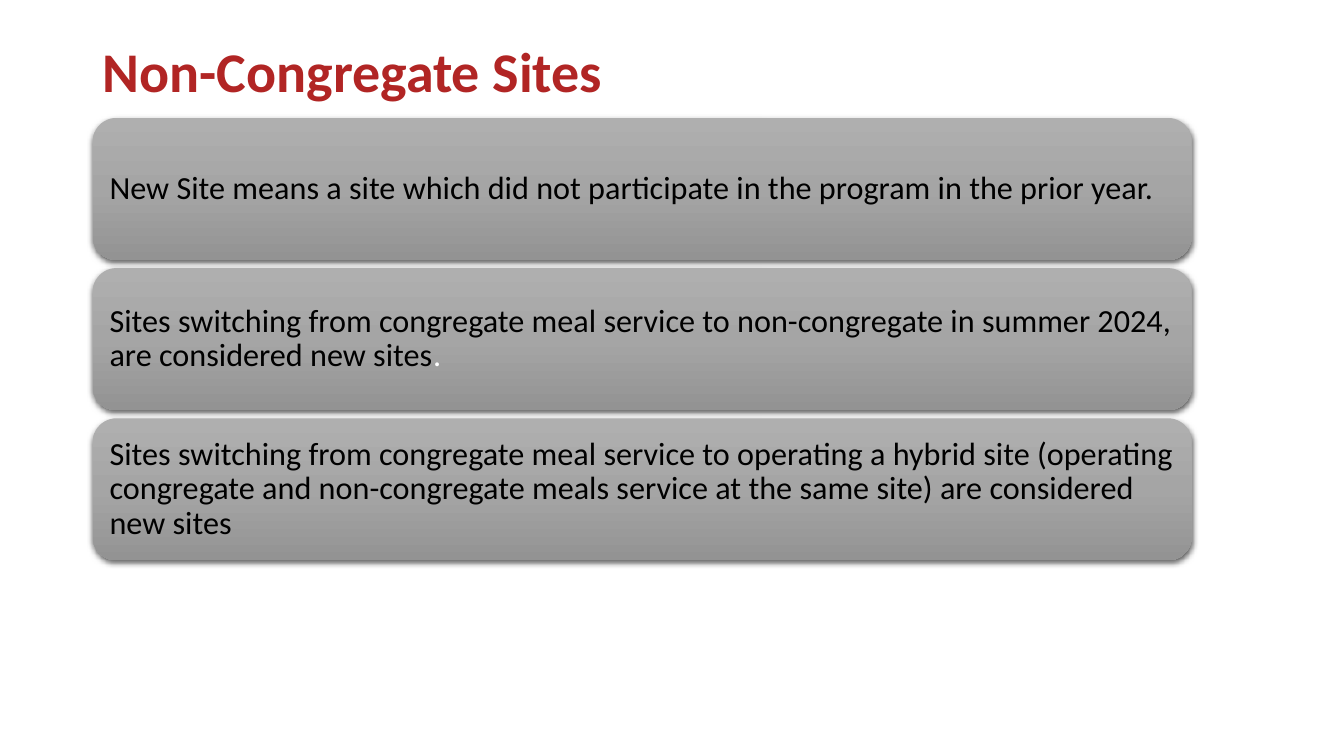
from copy import deepcopy

from lxml import etree
from pptx import Presentation
from pptx import util as u
from pptx.dml.color import RGBColor
from pptx.enum import shapes, text
from pptx.oxml.ns import qn

COLORS = {
    "title": "B12524",
    "body": "000000",
    "light": "FFFFFF",
    "shadow": "000000",
    "card_top": "AFAFAF",
    "card_middle": "A5A5A5",
    "card_bottom": "939393",
}
LEFT = 0.92
CARD_TOP, CARD_PITCH = 1.17, 1.49
CARD_WIDTH, CARD_HEIGHT = 10.9, 1.41

# Each card is a list of (wording, colour) spans.
CARDS = [
    [("New Site means a site which did not participate in the program "
      "in the prior year.", "body")],
    [("Sites switching from congregate meal service to non-congregate "
      "in summer 2024, are considered new sites", "body"), (".", "light")],
    [("Sites switching from congregate meal service to operating a hybrid site "
      "(operating congregate and non-congregate meals service at the same site) "
      "are considered new sites", "body")],
]


class SlideBuilder:
    def __init__(self, page, font_name="Calibri"):
        self.page = page
        self.font_name = font_name

    def color(self, name):
        return RGBColor.from_string(COLORS[name])

    def set_text(self, shape, spans, size, bold=False):
        frame = shape.text_frame
        frame.word_wrap = True
        frame.vertical_anchor = text.MSO_ANCHOR.MIDDLE
        para = frame.paragraphs[0]
        para.alignment = text.PP_ALIGN.LEFT
        para.line_spacing = 0.9
        for wording, color in spans:
            span = para.add_run()
            span.text = wording
            span.font.name = self.font_name
            span.font.size = u.Pt(size)
            span.font.bold = bold
            span.font.color.rgb = self.color(color)

    def title(self, wording, left, top, width, height):
        box = self.page.shapes.add_textbox(
            u.Inches(left), u.Inches(top), u.Inches(width), u.Inches(height))
        self.set_text(box, [(wording, "title")], 40, bold=True)

    def card(self, spans, left, top, width, height):
        box = self.page.shapes.add_shape(
            shapes.MSO_SHAPE.ROUNDED_RECTANGLE,
            u.Inches(left), u.Inches(top), u.Inches(width), u.Inches(height))
        box.line.fill.background()
        self.shade(box)
        self.drop_shadow(box)
        self.set_text(box, spans, 23)

    def shade(self, box):
        """Fill with a three-stop gradient running from top to bottom."""
        box.fill.gradient()
        box.fill.gradient_angle = 270
        stop_list = box._element.spPr.find(".//" + qn("a:gsLst"))
        stop_list.insert(1, deepcopy(stop_list[0]))
        names = ("card_top", "card_middle", "card_bottom")
        for index, (stop, name) in enumerate(zip(box.fill.gradient_stops, names)):
            stop.position = index / 2
            stop.color.rgb = self.color(name)

    def drop_shadow(self, box):
        box.shadow.inherit = False
        effects = box._element.spPr.find(qn("a:effectLst"))
        shadow = etree.SubElement(
            effects, qn("a:outerShdw"), blurRad=str(u.Pt(4.5)),
            dist=str(u.Pt(1.5)), dir="5400000", algn="ctr", rotWithShape="0")
        tint = etree.SubElement(shadow, qn("a:srgbClr"), val=COLORS["shadow"])
        etree.SubElement(tint, qn("a:alpha"), val="63000")


def main():
    deck = Presentation()
    deck.slide_width = u.Inches(13.33)
    deck.slide_height = u.Inches(7.5)
    builder = SlideBuilder(deck.slides.add_slide(deck.slide_layouts[6]))

    builder.title("Non-Congregate Sites", LEFT, 0.18, 11.5, 1.12)
    for index, spans in enumerate(CARDS):
        builder.card(spans, LEFT, CARD_TOP + index * CARD_PITCH,
                     CARD_WIDTH, CARD_HEIGHT)
    deck.save("out.pptx")


if __name__ == "__main__":
    main()
